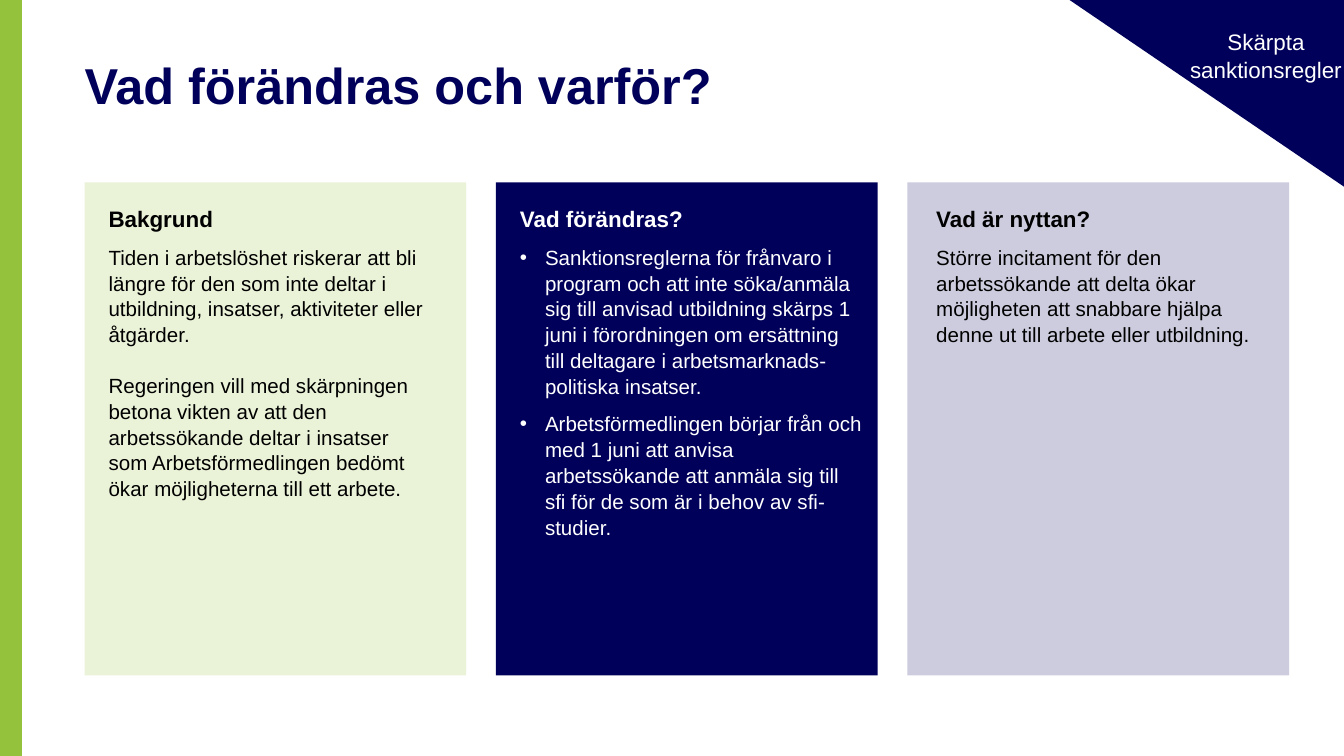
"""Build a slide with three panels on what changes and why."""
from dataclasses import dataclass

from lxml import etree
from pptx import Presentation
from pptx.dml.color import RGBColor
from pptx.enum.shapes import MSO_SHAPE
from pptx.enum.text import PP_ALIGN
from pptx.oxml.ns import qn
from pptx.util import Pt

RECT = MSO_SHAPE.RECTANGLE
WEDGE = MSO_SHAPE.RIGHT_TRIANGLE
TRI = MSO_SHAPE.ISOSCELES_TRIANGLE
LEFT, MID = PP_ALIGN.LEFT, PP_ALIGN.CENTER

NAVY = RGBColor(0x00, 0x00, 0x5A)
GREEN = RGBColor(0x95, 0xC2, 0x3D)
PALE = RGBColor(0xEA, 0xF2, 0xD8)
LILAC = RGBColor(0xCC, 0xCC, 0xDE)
WHITE = RGBColor(0xFF, 0xFF, 0xFF)
BLACK = RGBColor(0x00, 0x00, 0x00)

COL_X, COL_Y, COL_W, COL_H, STEP = 45.3, 97.7, 204.5, 264.2, 220.4
TEXT_Y, INDENT = 105.8, 13.4


@dataclass
class Para:
    text: str
    size: float = 11
    bold: bool = False
    after: float = 0
    bullet: bool = False
    align: PP_ALIGN = LEFT


@dataclass
class Panel:
    fill: RGBColor
    ink: RGBColor
    inset: float
    width: float
    height: float
    paras: list[Para]


def head(text: str) -> Para:
    return Para(text, size=12, bold=True, after=6)


PANELS = [
    Panel(PALE, BLACK, 5.8, 188, 213, [
        head("Bakgrund"),
        Para("Tiden i arbetslöshet riskerar att bli längre för den som inte "
             "deltar i utbildning, insatser, aktiviteter eller åtgärder.",
             after=13.2),
        Para("Regeringen vill med skärpningen betona vikten av att den "
             "arbetssökande deltar i insatser som Arbetsförmedlingen bedömt "
             "ökar möjligheterna till ett arbete."),
    ]),
    Panel(NAVY, WHITE, 5.8, 198.7, 181, [
        head("Vad förändras?"),
        Para("Sanktionsreglerna för frånvaro i program och att inte "
             "söka/anmäla sig till anvisad utbildning skärps 1 juni i "
             "förordningen om ersättning till deltagare i "
             "arbetsmarknads-politiska insatser.", after=6, bullet=True),
        Para("Arbetsförmedlingen börjar från och med 1 juni att anvisa "
             "arbetssökande att anmäla sig till sfi för de som är i behov "
             "av sfi-studier.", after=6, bullet=True),
    ]),
    Panel(LILAC, BLACK, 8.4, 188, 81, [
        head("Vad är nyttan?"),
        Para("Större incitament för den arbetssökande att delta ökar "
             "möjligheten att snabbare hjälpa denne ut till arbete eller "
             "utbildning."),
    ]),
]


def add_block(slide, kind: MSO_SHAPE, x: float, y: float, w: float, h: float,
              fill: RGBColor):
    shape = slide.shapes.add_shape(kind, Pt(x), Pt(y), Pt(w), Pt(h))
    shape.shadow.inherit = False
    shape.fill.solid()
    shape.fill.fore_color.rgb = fill
    shape.line.fill.background()
    return shape


def set_bullet(para) -> None:
    props = para._p.get_or_add_pPr()
    props.set("marL", str(Pt(INDENT)))
    props.set("indent", str(-Pt(INDENT)))
    etree.SubElement(props, qn("a:buFont")).set("typeface", "Arial")
    etree.SubElement(props, qn("a:buChar")).set("char", "•")


def add_text(slide, x: float, y: float, w: float, h: float, ink: RGBColor,
             paras: list[Para], pad: bool = True) -> None:
    frame = slide.shapes.add_textbox(Pt(x), Pt(y), Pt(w), Pt(h)).text_frame
    frame.word_wrap = True
    if not pad:
        for side in ("left", "top", "right", "bottom"):
            setattr(frame, f"margin_{side}", Pt(0))
    for i, item in enumerate(paras):
        para = frame.add_paragraph() if i else frame.paragraphs[0]
        look = {"alignment": item.align, "line_spacing": 1.05,
                "space_after": Pt(item.after)}
        for key, value in look.items():
            setattr(para, key, value)
        if item.bullet:
            set_bullet(para)
        run = para.add_run()
        run.text = item.text
        style = {"name": "Arial", "size": Pt(item.size), "bold": item.bold}
        for key, value in style.items():
            setattr(run.font, key, value)
        run.font.color.rgb = ink


def add_panel(slide, panel: Panel, x: float) -> None:
    add_block(slide, RECT, x, COL_Y, COL_W, COL_H, panel.fill)
    add_text(slide, x + panel.inset, TEXT_Y, panel.width, panel.height,
             panel.ink, panel.paras)


def main() -> None:
    deck = Presentation()
    deck.slide_width, deck.slide_height = Pt(720), Pt(405)
    slide = deck.slides.add_slide(deck.slide_layouts[6])
    bar = add_block(slide, RECT, 0, 0, 11.3, 405, GREEN)
    bar.line.color.rgb = GREEN
    bar.line.width = Pt(1)
    add_text(slide, COL_X, 27.5, 584.6, 53.3, NAVY,
             [Para("Vad förändras och varför?", size=27, bold=True)],
             pad=False)
    for i, panel in enumerate(PANELS):
        add_panel(slide, panel, COL_X + i * STEP)
    corner = add_block(slide, TRI, 573, 0, 147, 100, NAVY)
    corner.adjustments[0] = 0
    corner.rotation = 180
    add_text(slide, 630, 10.8, 96.5, 36, WHITE,
             [Para("Skärpta sanktionsregler", size=12, align=MID)])
    deck.save("out.pptx")


if __name__ == "__main__":
    main()
